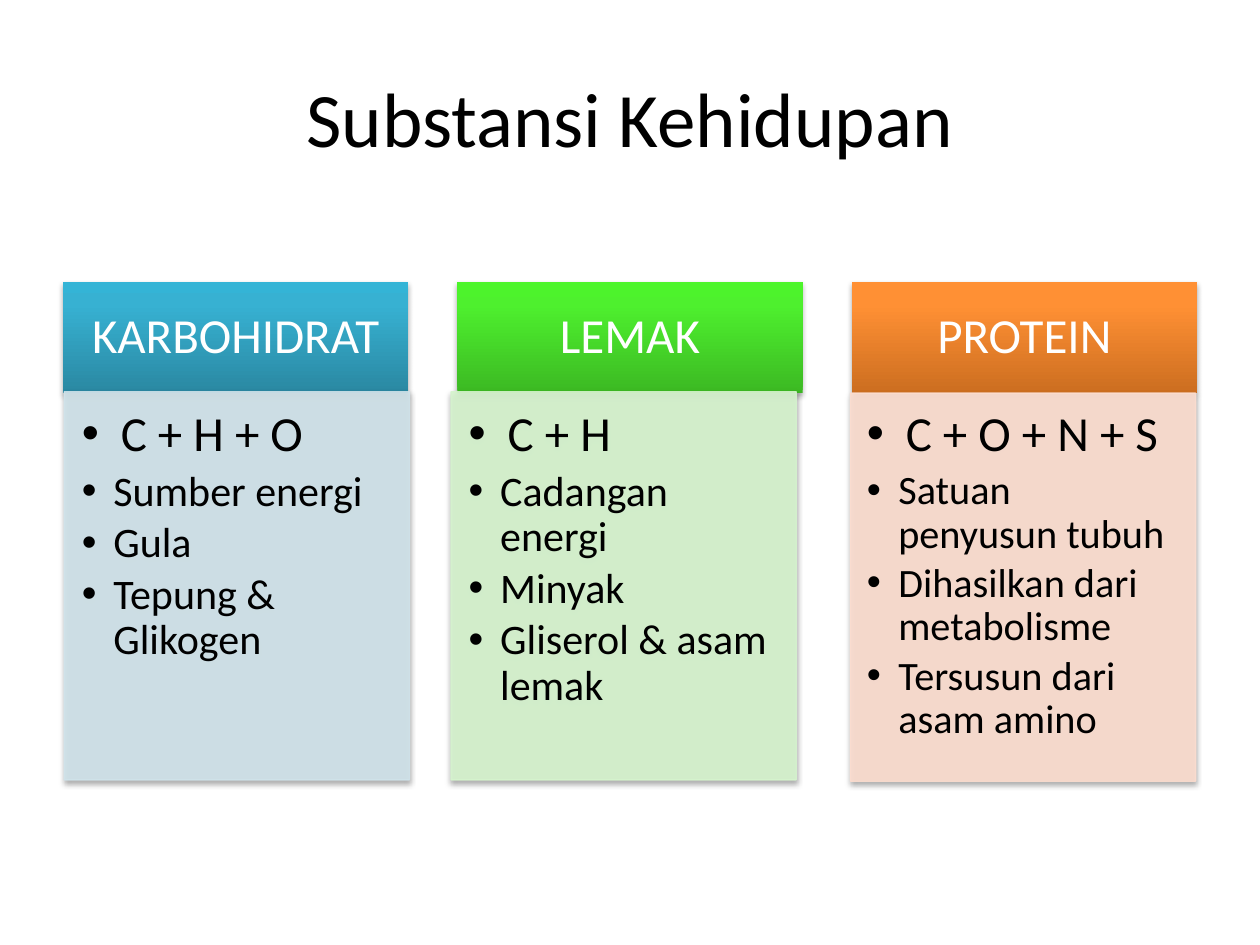
from dataclasses import dataclass

from lxml import etree
from pptx import Presentation
from pptx.dml.color import RGBColor
from pptx.enum.shapes import MSO_SHAPE
from pptx.enum.text import MSO_ANCHOR, PP_ALIGN
from pptx.oxml.ns import qn
from pptx.util import Inches, Pt

RECT = MSO_SHAPE.RECTANGLE
TOP, MIDDLE = MSO_ANCHOR.TOP, MSO_ANCHOR.MIDDLE
LEFT, CENTER = PP_ALIGN.LEFT, PP_ALIGN.CENTER


@dataclass(frozen=True)
class Theme:
    font: str = "Calibri"
    dark: str = "000000"
    light: str = "FFFFFF"
    title: int = 44
    head: int = 28
    blue: tuple = ("2A88A2", "37B1D2", "34B4D6", "D0E3EA")
    green: tuple = ("3CB923", "4EF02E", "4CF52A", "D6F4CE")
    orange: tuple = ("CC6E20", "FF9034", "FF9136", "FCDDCF")


THEME = Theme()
WIDE, HEAD, BODY = 2.74, 0.88, 3.08


def sub(parent, tag, **attrs):
    node = etree.SubElement(parent, qn(tag))
    for key, value in attrs.items():
        node.set(key, str(value))
    return node


def add_run(para, text, size, color):
    run = para.add_run()
    run.text = text
    run.font.name = THEME.font
    run.font.size = Pt(size)
    run.font.color.rgb = RGBColor.from_string(color)


def set_frame(shape, insets, anchor):
    frame = shape.text_frame
    frame.word_wrap = True
    frame.vertical_anchor = anchor
    (frame.margin_left, frame.margin_top,
     frame.margin_right, frame.margin_bottom) = map(Inches, insets)
    return frame


def add_card(slide, box):
    """Add a rectangle with a soft shadow below it."""
    card = slide.shapes.add_shape(RECT, *map(Inches, box))
    card.shadow.inherit = False
    effects = card._element.spPr.find(qn("a:effectLst"))
    shade = sub(effects, "a:outerShdw", blurRad=Pt(3.1), dist=Pt(1.8),
                dir=5400000, rotWithShape=0)
    color = sub(shade, "a:srgbClr", val=THEME.dark)
    sub(color, "a:alpha", val=35000)
    return card


def paint_ramp(shape, colors):
    """Fill with a three-stop gradient that runs upward."""
    shape.fill.gradient()
    shape.fill.gradient_angle = 90
    stops = shape._element.spPr.find(".//" + qn("a:gsLst"))
    for stop in list(stops):
        stops.remove(stop)
    for place, color in zip((0, 80000, 100000), colors):
        sub(sub(stops, "a:gs", pos=place), "a:srgbClr", val=color)


def paint_tint(shape, color):
    """Fill and outline with one colour at 90 % opacity."""
    shape.line.width = Pt(0.75)
    for fill in (shape.fill, shape.line.fill):
        fill.solid()
        fill.fore_color.rgb = RGBColor.from_string(color)
    for node in shape._element.spPr.findall(".//" + qn("a:solidFill")):
        sub(node[0], "a:alpha", val=90000)


def add_bullet(para, indent):
    props = para._p.get_or_add_pPr()
    props.set("marL", str(Inches(indent)))
    props.set("indent", str(-Inches(indent)))
    sub(props, "a:buFont", typeface="Arial")
    sub(props, "a:buChar", char="•")


def add_title(slide, box, text):
    title = slide.shapes.title
    title.left, title.top, title.width, title.height = map(Inches, box)
    title.text_frame.vertical_anchor = MIDDLE
    para = title.text_frame.paragraphs[0]
    para.alignment = CENTER
    add_run(para, text, THEME.title, THEME.dark)


def add_head(slide, box, text, colors):
    card = add_card(slide, box)
    card.line.fill.background()
    paint_ramp(card, colors)
    frame = set_frame(card, (0.22, 0.12, 0.22, 0.12), MIDDLE)
    para = frame.paragraphs[0]
    para.alignment = CENTER
    para.line_spacing = 0.9
    add_run(para, text, THEME.head, THEME.light)


def add_list(slide, box, items, size, pad, color):
    card = add_card(slide, box)
    paint_tint(card, color)
    frame = set_frame(card, (pad, pad, pad + 0.05, pad + 0.07), TOP)
    for i, item in enumerate(items):
        para = frame.add_paragraph() if i else frame.paragraphs[0]
        scale = size if i else THEME.head
        para.alignment = LEFT
        para.line_spacing = 0.9
        para.space_after = Pt(round(scale * 0.15, 1))
        add_bullet(para, 0.25 if i else 0.31)
        add_run(para, item, scale, THEME.dark)


def main():
    deck = Presentation()
    deck.slide_width, deck.slide_height = Inches(10), Inches(7.5)
    slide = deck.slides.add_slide(deck.slide_layouts[5])
    add_title(slide, (0.5, 0.3, 9, 1.25), "Substansi Kehidupan")

    # heading, palette, list left, list top, text size, padding, items
    columns = (
        ("KARBOHIDRAT", THEME.blue, 0.51, 3.11, 24, 0.14,
         ("C + H + O", "Sumber energi", "Gula", "Tepung & Glikogen")),
        ("LEMAK", THEME.green, 3.58, 3.11, 24, 0.14,
         ("C + H", "Cadangan energi", "Minyak", "Gliserol & asam lemak")),
        ("PROTEIN", THEME.orange, 6.75, 3.12, 23, 0.13,
         ("C + O + N + S", "Satuan penyusun tubuh",
          "Dihasilkan dari metabolisme", "Tersusun dari asam amino")),
    )
    for i, (name, colors, left, top, size, pad, items) in enumerate(columns):
        add_head(slide, (0.5 + i * 3.13, 2.24, WIDE, HEAD), name, colors[:3])
        add_list(slide, (left, top, WIDE, BODY), items, size, pad, colors[3])
    deck.save("out.pptx")


if __name__ == "__main__":
    main()
